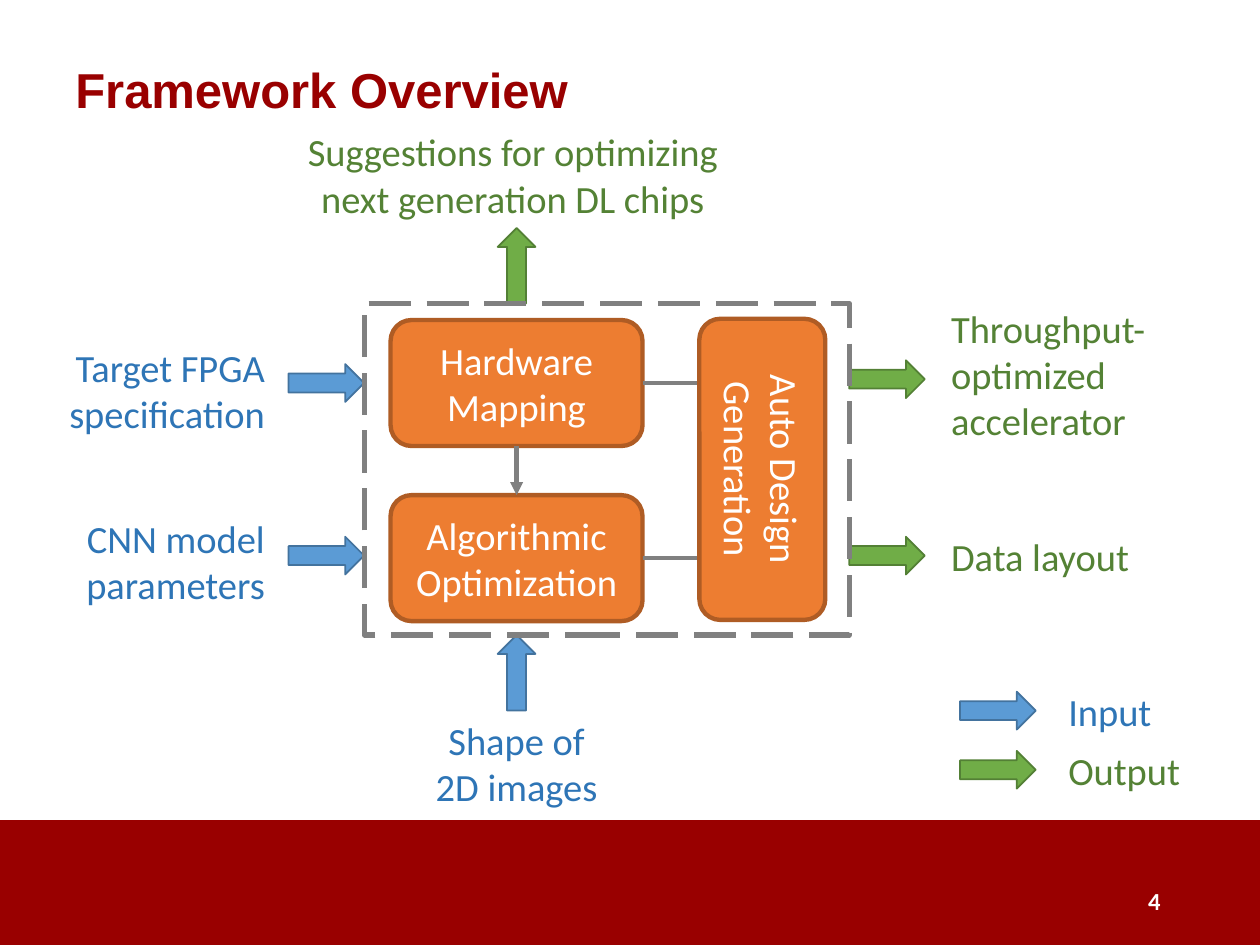
from lxml.etree import SubElement
from pptx import Presentation
from pptx.dml.color import RGBColor
from pptx.enum.dml import MSO_LINE
from pptx.enum.shapes import MSO_CONNECTOR, MSO_SHAPE
from pptx.enum.text import MSO_ANCHOR, PP_ALIGN
from pptx.oxml.ns import qn
from pptx.util import Inches, Pt

RED = RGBColor(0x99, 0x00, 0x00)
WHITE = RGBColor(0xFF, 0xFF, 0xFF)
GRAY = RGBColor(0x80, 0x80, 0x80)
ORANGE = RGBColor(0xED, 0x7D, 0x31)
ORANGE_EDGE = RGBColor(0xAF, 0x5C, 0x24)
INPUT = (RGBColor(0x5B, 0x9B, 0xD5), RGBColor(0x43, 0x73, 0x9E), RGBColor(0x2E, 0x75, 0xB6))
OUTPUT = (RGBColor(0x70, 0xAD, 0x47), RGBColor(0x53, 0x80, 0x35), RGBColor(0x54, 0x82, 0x35))

SLIDE_W, SLIDE_H = 10, 7.5
FOOTER_TOP = 6.51
FRAME_X, FRAME_Y, FRAME_W, FRAME_H = 2.89, 2.41, 3.85, 2.63
FRAME_RIGHT, FRAME_BOTTOM = FRAME_X + FRAME_W, FRAME_Y + FRAME_H
STAGE_X, STAGE_W, STAGE_H = 3.1, 2, 1
STAGE_MID = STAGE_X + STAGE_W / 2
GENERATOR_MID, GENERATOR_LENGTH = 6.05, 2.39
ARROW_LENGTH, ARROW_WIDTH = 0.6, 0.3
LINE_H, INSET = 0.37, 0.1
LEGEND_X, LEGEND_TEXT_X = 7.62, 8.38

TITLE = "Framework Overview"
PAGE = "4"
STAGES = [("Hardware Mapping", 2.54), ("Algorithmic Optimization", 3.93)]
GENERATOR = "Auto Design Generation"

LEFT, CENTER, RIGHT = PP_ALIGN.LEFT, PP_ALIGN.CENTER, PP_ALIGN.RIGHT
INPUT_X, OUTPUT_X = FRAME_X - ARROW_LENGTH, FRAME_RIGHT
ACROSS, UP = MSO_SHAPE.RIGHT_ARROW, MSO_SHAPE.UP_ARROW
UP_X = STAGE_MID - ARROW_WIDTH / 2

FLOWS = [
    (INPUT, ACROSS, INPUT_X, 2.89, "Target FPGA specification", 0.38, 2.68, 1.82, 2, RIGHT),
    (INPUT, ACROSS, INPUT_X, 4.26, "CNN model parameters", 0.38, 4.04, 1.82, 2, RIGHT),
    (INPUT, UP, UP_X, FRAME_BOTTOM, "Shape of 2D images", 3.3, 5.64, 1.6, 2, CENTER),
    (OUTPUT, UP, UP_X, FRAME_Y - ARROW_LENGTH,
     "Suggestions for optimizing next generation DL chips", 2.19, 0.97, 3.76, 2, CENTER),
    (OUTPUT, ACROSS, OUTPUT_X, 2.86, "Throughput-optimized accelerator", 7.45, 2.37, 2.55, 3, LEFT),
    (OUTPUT, ACROSS, OUTPUT_X, 4.26, "Data layout", 7.45, 4.18, 1.62, 1, LEFT),
    (INPUT, ACROSS, LEGEND_X, 5.49, "Input", LEGEND_TEXT_X, 5.41, 1.12, 1, LEFT),
    (OUTPUT, ACROSS, LEGEND_X, 5.96, "Output", LEGEND_TEXT_X, 5.88, 1.12, 1, LEFT),
]

prs = Presentation()
prs.slide_width, prs.slide_height = Inches(SLIDE_W), Inches(SLIDE_H)
slide = prs.slides.add_slide(prs.slide_layouts[6])


def write(shape, text, color, align, size=22, font="Calibri", bold=False, anchor=MSO_ANCHOR.MIDDLE):
    frame = shape.text_frame
    frame.word_wrap = True
    frame.vertical_anchor = anchor
    paragraph = frame.paragraphs[0]
    paragraph.alignment = align
    run = paragraph.add_run()
    run.text = text
    run.font.size, run.font.name, run.font.bold = Pt(size), font, bold
    run.font.color.rgb = color
    return paragraph


def textbox(x, y, w, h):
    return slide.shapes.add_textbox(Inches(x), Inches(y), Inches(w), Inches(h))


def block(kind, x, y, w, h, fill=None, edge=None, weight=1):
    shape = slide.shapes.add_shape(kind, Inches(x), Inches(y), Inches(w), Inches(h))
    shape.shadow.inherit = False
    if fill is None:
        shape.fill.background()
    else:
        shape.fill.solid()
        shape.fill.fore_color.rgb = fill
    if edge is None:
        shape.line.fill.background()
    else:
        shape.line.color.rgb = edge
        shape.line.width = Pt(weight)
    return shape


def stage(text, x, y, w):
    shape = block(MSO_SHAPE.ROUNDED_RECTANGLE, x, y, w, STAGE_H, ORANGE, ORANGE_EDGE, 2.5)
    write(shape, text, WHITE, CENTER)
    return shape


def link(source, x, y):
    line = slide.shapes.add_connector(MSO_CONNECTOR.STRAIGHT, 0, 0, Inches(x), Inches(y))
    line.begin_connect(*source)
    line.line.color.rgb = GRAY
    line.line.width = Pt(2.5)
    SubElement(line._element.spPr, qn("a:effectLst"))
    return line


block(MSO_SHAPE.RECTANGLE, 0, FOOTER_TOP, SLIDE_W, SLIDE_H - FOOTER_TOP, RED)
heading = write(textbox(0.5, 0.3, 9, 0.87), TITLE, RED, LEFT, 28, "Arial", True)
heading.line_spacing = 0.9
write(textbox(7.06, 6.95, 2.25, 0.4), PAGE, WHITE, RIGHT, 14, bold=True)

hardware, algorithm = [stage(text, STAGE_X, y, STAGE_W) for text, y in STAGES]

for (fill, edge, ink), kind, x, y, label, label_x, label_y, label_w, lines, align in FLOWS:
    size = (ARROW_LENGTH, ARROW_WIDTH) if kind == ACROSS else (ARROW_WIDTH, ARROW_LENGTH)
    block(kind, x, y, *size, fill, edge)
    label_box = textbox(label_x, label_y, label_w, lines * LINE_H + INSET)
    write(label_box, label, ink, align, anchor=MSO_ANCHOR.TOP)

for source, (_, y) in zip((hardware, algorithm), STAGES):
    link((source, 3), GENERATOR_MID + STAGE_H / 2, y + STAGE_H / 2)
handoff = link((hardware, 2), STAGE_MID, STAGES[1][1])
handoff.end_connect(algorithm, 0)
SubElement(handoff.line._get_or_add_ln(), qn("a:tailEnd"), type="triangle")

generator_y = FRAME_Y + FRAME_H / 2 - STAGE_H / 2
generator = stage(GENERATOR, GENERATOR_MID - GENERATOR_LENGTH / 2, generator_y, GENERATOR_LENGTH)
generator.rotation = 90

boundary = block(MSO_SHAPE.RECTANGLE, FRAME_X, FRAME_Y, FRAME_W, FRAME_H, edge=GRAY, weight=3)
boundary.line.dash_style = MSO_LINE.LONG_DASH

prs.save("out.pptx")
